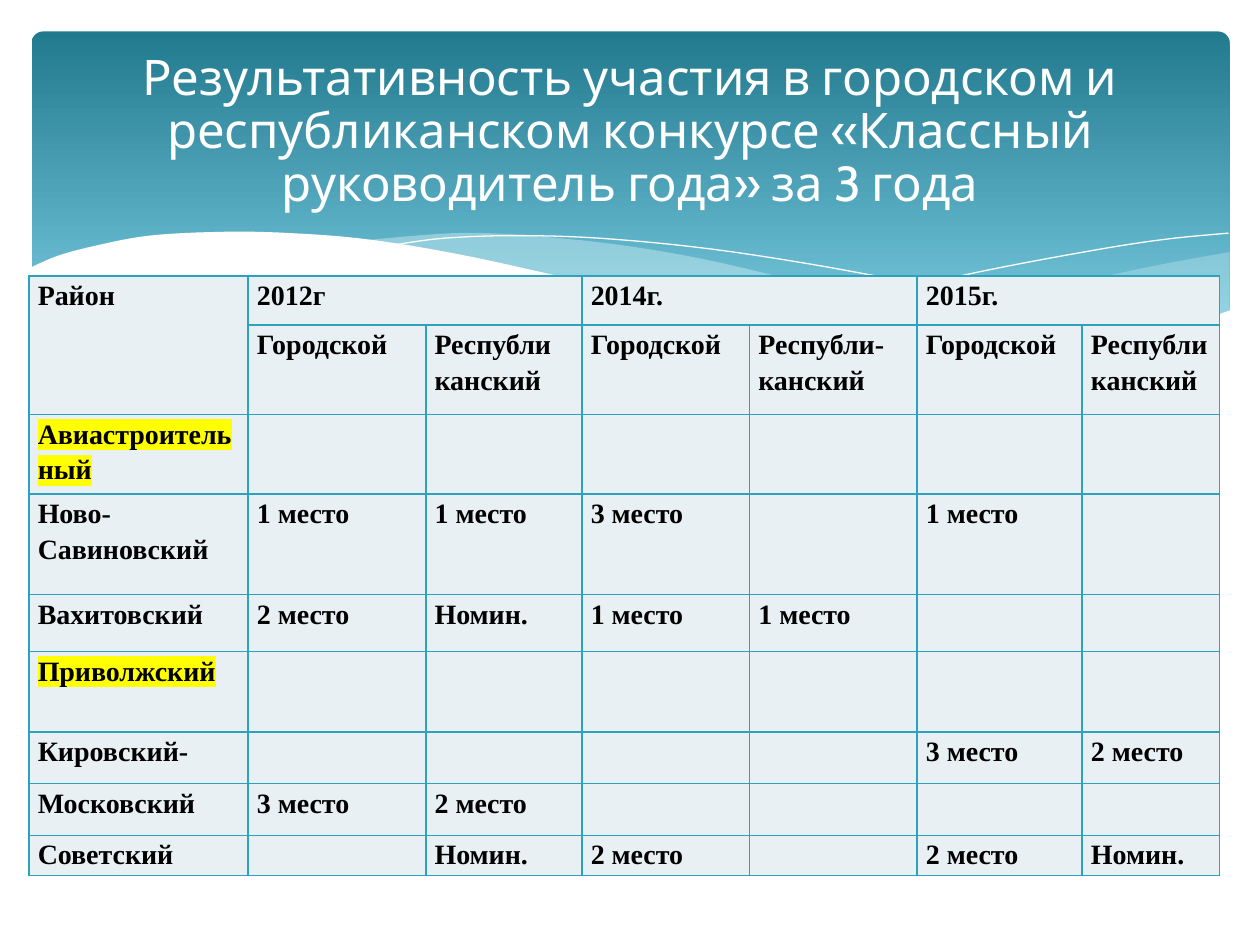
import pptx
import pptx.dml.color
import pptx.enum.shapes
import pptx.enum.text
import pptx.oxml
import pptx.oxml.ns
import pptx.util
from lxml import etree

Inches, Pt = pptx.util.Inches, pptx.util.Pt
RGBColor = pptx.dml.color.RGBColor
Align = pptx.enum.text.PP_ALIGN
qn = pptx.oxml.ns.qn

WHITE = RGBColor(0xFF, 0xFF, 0xFF)
BLACK = RGBColor(0, 0, 0)
DEEP_TEAL = RGBColor(0x22, 0x7A, 0x8F)
LIGHT_TEAL = RGBColor(0x7A, 0xCB, 0xE0)
MIST = RGBColor(0xDE, 0xF5, 0xFA)
CELL_FILL = RGBColor(0xE8, 0xF0, 0xF4)
BORDER = RGBColor(0x2D, 0xA2, 0xBF)
YELLOW = RGBColor(0xFF, 0xFF, 0)

TITLE = ("Результативность участия в городском и республиканском конкурсе "
         "«Классный руководитель года» за 3 года")
COLUMNS = [1.74, 1.41, 1.24, 1.33, 1.33, 1.31, 1.09]
ROWS = [0.39, 0.71, 0.63, 0.8, 0.45, 0.64, 0.41, 0.41, 0.32]
CELLS = [
    ["Район", "2012г", "", "2014г.", "", "2015г.", ""],
    ["", "Городской", "Республи\nканский", "Городской", "Республи-\nканский",
     "Городской", "Республи\nканский"],
    ["Авиастроительный", "", "", "", "", "", ""],
    ["Ново-Савиновский", "1 место", "1 место", "3 место", "", "1 место", ""],
    ["Вахитовский", "2 место", "Номин.", "1 место", "1 место", "", ""],
    ["Приволжский", "", "", "", "", "", ""],
    ["Кировский-", "", "", "", "", "3 место", "2 место"],
    ["Московский", "3 место", "2 место", "", "", "", ""],
    ["Советский", "", "Номин.", "2 место", "", "2 место", "Номин."],
]
MERGES = [((0, 0), (1, 0)), ((0, 1), (0, 2)), ((0, 3), (0, 4)), ((0, 5), (0, 6))]
HIGHLIGHTED = {"Авиастроительный", "Приволжский"}

# Waves: each edge is a list of points joined by a smooth curve
RIGHT_WAVE = [
    [(9.76, 2), (9.21, 2.1), (8.61, 2.23), (7.53, 2.48), (6.61, 2.65)],
    [(6.61, 2.65), (7.32, 2.74), (8.03, 2.78), (8.72, 2.74), (9.28, 2.63), (9.76, 2.47)],
]
MIDDLE_WAVE = [
    [(8.93, 2.73), (8.07, 2.6), (7.06, 2.4), (6.29, 2.22), (5.55, 2.05), (4.89, 1.94),
     (4.2, 1.87), (3.61, 1.85), (2.86, 1.91)],
    [(2.86, 1.91), (3.62, 2.03), (4.49, 2.22), (5.3, 2.4), (6.18, 2.58), (7.09, 2.72),
     (7.96, 2.78), (8.93, 2.73)],
]
LEFT_LINE = [[(3.09, 1.95), (3.53, 1.89), (4.16, 1.87), (4.89, 1.9), (5.82, 2),
              (6.95, 2.19), (7.95, 2.41), (9.07, 2.72)]]
RIGHT_LINE = [[(6.13, 2.57), (6.95, 2.35), (7.76, 2.16), (8.66, 1.99), (9.24, 1.9),
               (9.75, 1.85)]]
WHITE_WAVE = [
    [(9.77, 2.46), (9.3, 2.62), (8.75, 2.73), (8.09, 2.77), (7.26, 2.72), (6.26, 2.58),
     (5.29, 2.39), (4.47, 2.2), (3.65, 2.02), (2.92, 1.9), (2.3, 1.85), (1.77, 1.84),
     (1.19, 1.87), (0.76, 1.95), (0.46, 2.03), (0.23, 2.13)],
    [(0.23, 3.29), (9.77, 3.29)],
]


def smooth(points, steps=6):
    """Sample a Catmull-Rom curve through the points."""
    padded = [points[0], *points, points[-1]]
    curve = [points[0]]
    for a, b, c, d in zip(padded, padded[1:], padded[2:], padded[3:]):
        for step in range(1, steps + 1):
            t = step / steps
            curve.append(tuple(
                0.5 * (2 * q + (r - p) * t + (2 * p - 5 * q + 4 * r - s) * t ** 2
                       + (3 * q - p - 3 * r + s) * t ** 3)
                for p, q, r, s in zip(a, b, c, d)))
    return curve


class SlideBuilder:
    title_font = "Cabin"
    table_font = "Times New Roman"

    def __init__(self, presentation):
        self.slide = presentation.slides.add_slide(presentation.slide_layouts[5])
        self.shapes = self.slide.shapes

    def banner(self, left, top, width, height):
        shape = self.shapes.add_shape(pptx.enum.shapes.MSO_SHAPE.ROUNDED_RECTANGLE,
                                      Inches(left), Inches(top), Inches(width), Inches(height))
        shape.shadow.inherit = False
        shape.adjustments[0] = 0.034
        shape.line.fill.background()
        shape.fill.gradient()
        shape.fill.gradient_angle = 270
        stops = zip(shape.fill.gradient_stops, (DEEP_TEAL, LIGHT_TEAL), (0, 0.9))
        for stop, color, position in stops:
            stop.color.rgb = color
            stop.position = position

    def wave(self, edges, fill=None, opacity=100, line=None):
        points = [(Inches(x), Inches(y)) for edge in edges
                  for x, y in (smooth(edge) if len(edge) > 2 else edge)]
        builder = self.shapes.build_freeform(*points[0])
        builder.add_line_segments(points[1:], close=fill is not None)
        shape = builder.convert_to_shape()
        shape.shadow.inherit = False
        if fill is None:
            shape.fill.background()
        else:
            shape.fill.solid()
            shape.fill.fore_color.rgb = fill
            if opacity < 100:
                color = shape._element.spPr.find(qn("a:solidFill"))[0]
                etree.SubElement(color, qn("a:alpha"), val=str(opacity * 1000))
        if line is None:
            shape.line.fill.background()
        else:
            shape.line.color.rgb = line
            shape.line.width = Pt(0)

    def title(self, text, left, top, width, height):
        shape = self.shapes.title
        shape.left, shape.top = Inches(left), Inches(top)
        shape.width, shape.height = Inches(width), Inches(height)
        frame = shape.text_frame
        frame.text = text
        frame.word_wrap = True
        frame.auto_size = pptx.enum.text.MSO_AUTO_SIZE.NONE
        frame.vertical_anchor = pptx.enum.text.MSO_ANCHOR.MIDDLE
        paragraph = frame.paragraphs[0]
        paragraph.alignment = Align.CENTER
        paragraph.line_spacing = 0.9
        self.style(paragraph.font, self.title_font, 28, WHITE)
        # Bring the title in front of the banner
        self.shapes._spTree.append(shape._element)

    def table(self, left, top):
        table = self.shapes.add_table(len(ROWS), len(COLUMNS), Inches(left), Inches(top),
                                      Inches(sum(COLUMNS)), Inches(sum(ROWS))).table
        table.first_row = table.horz_banding = False
        for column, width in zip(table.columns, COLUMNS):
            column.width = Inches(width)
        for row, height, texts in zip(table.rows, ROWS, CELLS):
            row.height = Inches(height)
            for cell, text in zip(row.cells, texts):
                self.cell(cell, text)
        for first, last in MERGES:
            table.cell(*first).merge(table.cell(*last))

    def cell(self, cell, text):
        cell.margin_left = cell.margin_right = Inches(0.07)
        cell.margin_top = cell.margin_bottom = 0
        properties = cell._tc.get_or_add_tcPr()
        for side in ("lnL", "lnR", "lnT", "lnB"):
            line = etree.SubElement(properties, qn(f"a:{side}"), w=str(Pt(1)))
            fill = etree.SubElement(line, qn("a:solidFill"))
            etree.SubElement(fill, qn("a:srgbClr"), val=str(BORDER))
        cell.fill.solid()
        cell.fill.fore_color.rgb = CELL_FILL
        cell.text = text
        for paragraph in cell.text_frame.paragraphs:
            paragraph.alignment = Align.JUSTIFY
            paragraph.line_spacing = 1.15
            self.style(paragraph.font, self.table_font, 16, BLACK, bold=True)
            if not text:
                etree.SubElement(paragraph._p, qn("a:endParaRPr"), sz="1600")
            if text in HIGHLIGHTED:
                run = paragraph.runs[0]._r.get_or_add_rPr()
                highlight = etree.SubElement(run, qn("a:highlight"))
                etree.SubElement(highlight, qn("a:srgbClr"), val=str(YELLOW))

    @staticmethod
    def style(font, name, size, color, bold=False):
        font.name, font.size, font.bold = name, Pt(size), bold
        font.color.rgb = color


def main():
    presentation = pptx.Presentation()
    presentation.slide_width, presentation.slide_height = Inches(10), Inches(7.5)
    builder = SlideBuilder(presentation)

    # Banner with waves
    builder.banner(0.25, 0.25, 9.51, 2.7)
    builder.wave(RIGHT_WAVE, fill=MIST, opacity=29)
    builder.wave(MIDDLE_WAVE, fill=MIST, opacity=40)
    builder.wave(LEFT_LINE, line=WHITE)
    builder.wave(RIGHT_LINE, line=WHITE)
    builder.wave(WHITE_WAVE, fill=WHITE)

    # Results table and title
    builder.table(0.23, 2.19)
    builder.title(TITLE, 0.5, 0.37, 9, 1.37)

    presentation.save("out.pptx")


if __name__ == "__main__":
    main()
